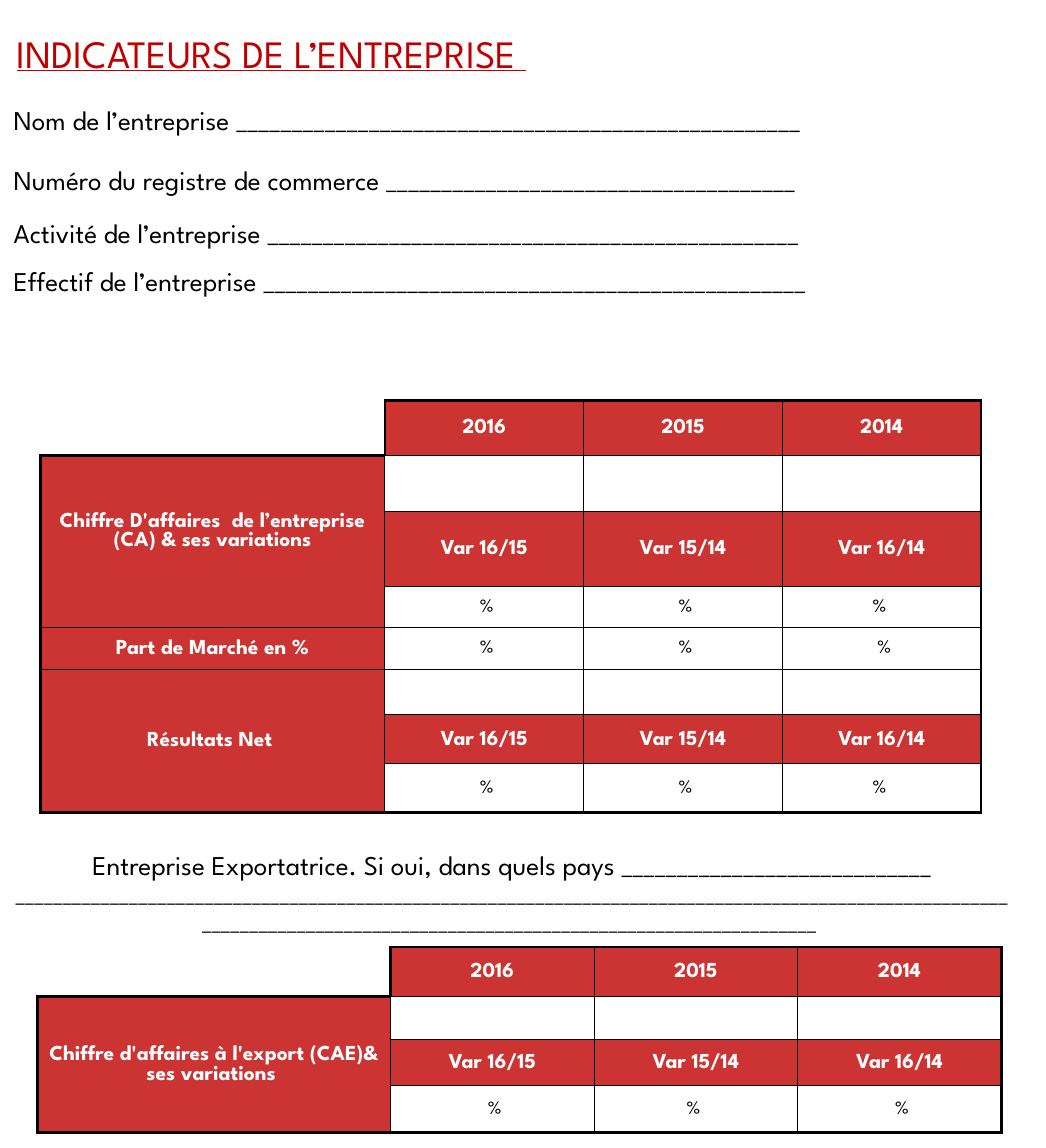
from dataclasses import dataclass

from lxml.etree import SubElement
from pptx import Presentation
from pptx.dml.color import RGBColor
from pptx.enum.shapes import MSO_SHAPE
from pptx.enum.text import MSO_ANCHOR, MSO_AUTO_SIZE, PP_ALIGN
from pptx.oxml.ns import qn
from pptx.util import Emu, Pt

EMU_PER_PX = 4572
FONT = "League Spartan"
BLACK, WHITE, RED, TITLE_RED = "000000", "FFFFFF", "CC3333", "C00000"
THIN, THICK = Pt(0.5), Pt(1.5)

YEARS = ("2016", "2015", "2014")
VARIATIONS = ("Var 16/15", "Var 15/14", "Var 16/14")
UNFILLED = ("", "", "")
BEFORE, AFTER = " %", "% "


@dataclass(frozen=True)
class Field:
    label: str
    blanks: int
    top: int


@dataclass(frozen=True)
class Label:
    text: str
    row: int
    span: int = 1
    bottom_inset: int = 0


@dataclass(frozen=True)
class Indicators:
    left: int
    top: int
    label_width: int
    value_width: int
    heights: tuple[int, ...]
    values: tuple[tuple[str, ...], ...]
    labels: tuple[Label, ...]


FIELDS = (
    Field("Nom de l’entreprise", 51, 138),
    Field("Numéro du registre de commerce", 37, 224),
    Field("Activité de l’entreprise", 48, 300),
    Field("Effectif de l’entreprise", 49, 370),
)

COMPANY = Indicators(
    58, 574, 494, 285,
    (79, 80, 108, 59, 60, 65, 70, 70),
    (YEARS, UNFILLED, VARIATIONS, (BEFORE, BEFORE, AFTER), (BEFORE,) * 3,
     UNFILLED, VARIATIONS, (BEFORE, BEFORE, AFTER)),
    (Label("Chiffre D'affaires  de l’entreprise (CA) & ses variations", 1, 3, 30),
     Label("Part de Marché en %", 4),
     Label("Résultats Net ", 5, 3)),
)

EXPORT = Indicators(
    54, 1358, 506, 292,
    (71, 61, 67, 67),
    (YEARS, UNFILLED, VARIATIONS, (BEFORE, AFTER, BEFORE)),
    (Label("Chiffre d'affaires à l'export (CAE)& ses variations ", 1, 3),),
)


def px(length: int) -> Emu:
    """Turn whole pixels into EMU."""
    return Emu(length * EMU_PER_PX)


def rgb(color: str) -> RGBColor:
    """Turn a hex string into a colour."""
    return RGBColor.from_string(color)


def write(paragraph, text: str, *, size: int = 14, color: str = BLACK,
          bold: bool = False, underline: bool = False, align=PP_ALIGN.LEFT) -> None:
    """Add one formatted run to a paragraph."""
    paragraph.alignment = align
    run = paragraph.add_run()
    run.text = text
    run.font.name = FONT
    run.font.size = Pt(size)
    run.font.bold = bold
    run.font.underline = underline
    run.font.color.rgb = rgb(color)


def add_title(slide) -> None:
    """Add the underlined heading."""
    heading = slide.shapes.add_shape(
        MSO_SHAPE.ROUNDED_RECTANGLE, 0, px(28), px(1240), px(96))
    heading.shadow.inherit = False
    heading.fill.background()
    heading.line.fill.background()
    write(heading.text_frame.paragraphs[0], "INDICATEURS DE L’ENTREPRISE ",
          size=20, color=TITLE_RED, underline=True)


def add_text_frame(slide, top: int, width: int, height: int):
    """Add a wrapping text box at the left edge and return its frame."""
    frame = slide.shapes.add_textbox(0, px(top), px(width), px(height)).text_frame
    frame.word_wrap = True
    frame.auto_size = MSO_AUTO_SIZE.SHAPE_TO_FIT_TEXT
    return frame


def add_field(slide, field: Field) -> None:
    """Add a label followed by a line to fill in."""
    frame = add_text_frame(slide, field.top, 1500, 68)
    write(frame.paragraphs[0], f"{field.label} {'_' * field.blanks}")


def add_export_question(slide) -> None:
    """Add the question on export countries."""
    frame = add_text_frame(slide, 1206, 1470, 148)
    write(frame.paragraphs[0],
          f"Entreprise Exportatrice. Si oui, dans quels pays {'_' * 28}",
          align=PP_ALIGN.CENTER)
    write(frame.add_paragraph(), "_" * 170 + " ", size=12, align=PP_ALIGN.CENTER)


def set_borders(cell, row: int, column: int, last_row: int, row_count: int) -> None:
    """Draw thick lines on the outline, thin ones inside, none around the corner."""
    corner = row == column == 0
    widths = {
        "L": None if corner else THICK if column == 0 or (row, column) == (0, 1) else THIN,
        "R": THICK if corner or column == len(YEARS) else THIN,
        "T": None if corner else THICK if row == 0 or (row, column) == (1, 0) else THIN,
        "B": THICK if corner or last_row == row_count - 1 else THIN,
    }
    properties = cell._tc.get_or_add_tcPr()
    for side, width in widths.items():
        line = SubElement(properties, qn(f"a:ln{side}"), w=str(width or 0))
        if width is None:
            SubElement(line, qn("a:noFill"))
        else:
            fill = SubElement(line, qn("a:solidFill"))
            SubElement(fill, qn("a:srgbClr"), val=BLACK)


def fill_cell(cell, text: str, bottom_inset: int = 0) -> None:
    """Set the text, insets and fill of a cell."""
    cell.vertical_anchor = MSO_ANCHOR.MIDDLE
    cell.margin_left = cell.margin_right = cell.margin_top = px(2)
    cell.margin_bottom = px(bottom_inset)
    paragraph = cell.text_frame.paragraphs[0]
    heading = text not in ("", BEFORE, AFTER)
    if heading:
        cell.fill.solid()
        cell.fill.fore_color.rgb = rgb(RED)
    else:
        cell.fill.background()
    if text:
        write(paragraph, text, size=11 if heading else 10, bold=heading,
              color=WHITE if heading else BLACK, align=PP_ALIGN.CENTER)
    else:
        SubElement(paragraph._p, qn("a:endParaRPr"), sz="1000")


def add_indicators(slide, data: Indicators) -> None:
    """Add a table of yearly figures and their variations."""
    widths = (data.label_width,) + (data.value_width,) * len(YEARS)
    row_count = len(data.heights)
    table = slide.shapes.add_table(
        row_count, len(widths), px(data.left), px(data.top),
        px(sum(widths)), px(sum(data.heights))).table
    table.first_row = table.horz_banding = False
    for column, width in zip(table.columns, widths):
        column.width = px(width)
    for row, height in zip(table.rows, data.heights):
        row.height = px(height)
    labels = {label.row: label for label in data.labels}
    for label in data.labels:
        if label.span > 1:
            table.cell(label.row, 0).merge(table.cell(label.row + label.span - 1, 0))
    for row, values in enumerate(data.values):
        label = labels.get(row, Label("", row))
        for column, text in enumerate((label.text, *values)):
            cell = table.cell(row, column)
            if not cell.is_spanned:
                last_row = row + (label.span - 1 if column == 0 else 0)
                set_borders(cell, row, column, last_row, row_count)
            fill_cell(cell, text, label.bottom_inset if column == 0 else 0)


def main() -> None:
    """Build the slide and save it."""
    presentation = Presentation()
    presentation.slide_width, presentation.slide_height = px(1500), px(1646)
    slide = presentation.slides.add_slide(presentation.slide_layouts[6])
    add_title(slide)
    for field in FIELDS:
        add_field(slide, field)
    add_export_question(slide)
    for data in (COMPANY, EXPORT):
        add_indicators(slide, data)
    presentation.save("out.pptx")


if __name__ == "__main__":
    main()
